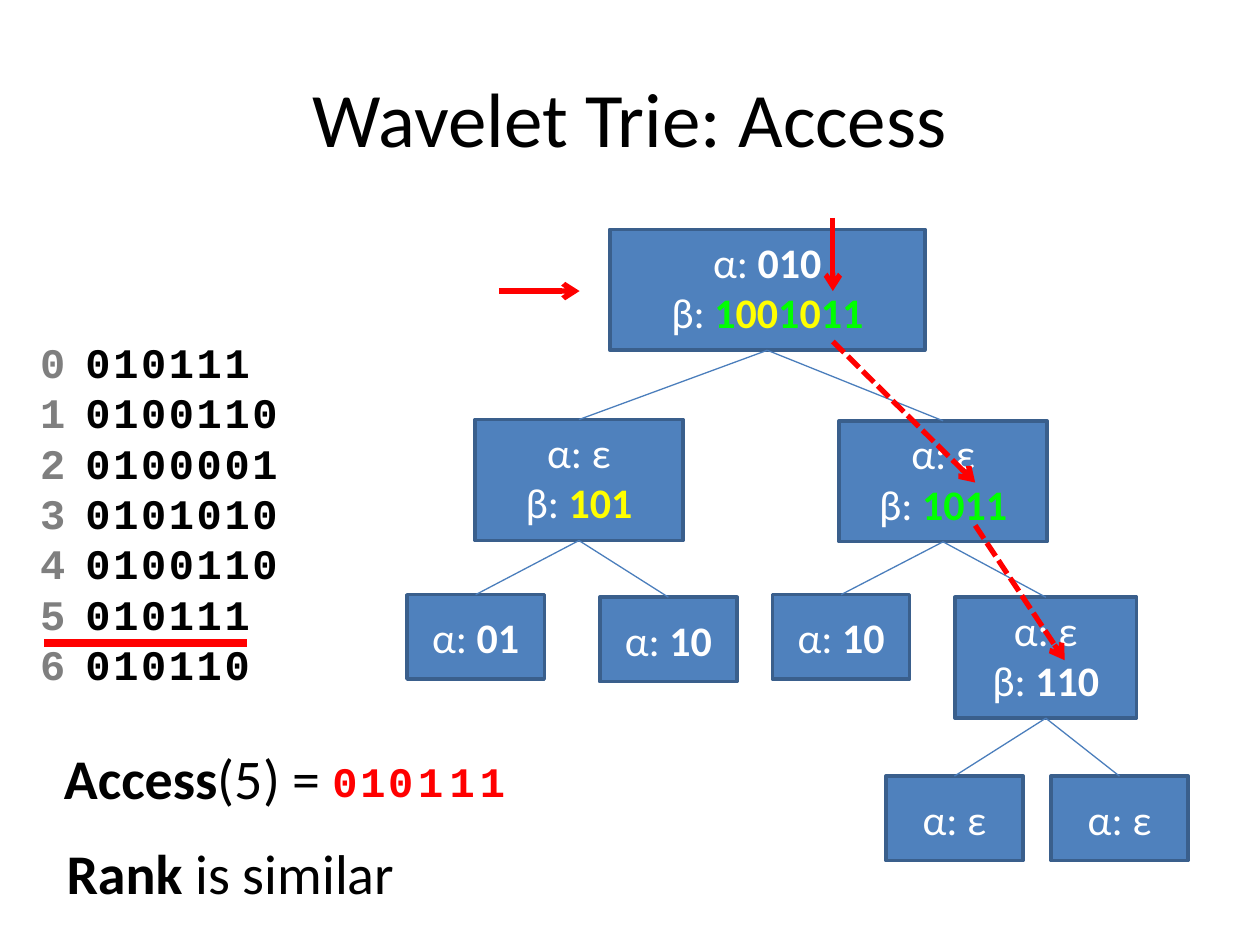
from lxml import etree
from pptx import Presentation
from pptx.dml.color import RGBColor
from pptx.enum.dml import MSO_LINE
from pptx.enum.shapes import MSO_CONNECTOR, MSO_SHAPE
from pptx.enum.text import MSO_ANCHOR, MSO_AUTO_SIZE, PP_ALIGN
from pptx.oxml.ns import qn
from pptx.util import Inches, Pt

STRAIGHT = MSO_CONNECTOR.STRAIGHT
RECTANGLE = MSO_SHAPE.RECTANGLE
MIDDLE = MSO_ANCHOR.MIDDLE
CENTER = PP_ALIGN.CENTER
LEFT = PP_ALIGN.LEFT
GROW = MSO_AUTO_SIZE.SHAPE_TO_FIT_TEXT
DASH = MSO_LINE.SQUARE_DOT
BOTTOM_SIDE, TOP_SIDE = 2, 0

BLACK, WHITE, GRAY, RED = "000000", "FFFFFF", "7F7F7F", "FF0000"
GREEN, YELLOW = "00FF00", "FFFF00"
NODE_FILL, NODE_LINE, EDGE = "4F81BD", "3A5F8C", "4B7EBC"
SANS, MONO = "Calibri", "Courier New"

prs = Presentation()
prs.slide_width, prs.slide_height = Inches(10), Inches(7.5)
slide = prs.slides.add_slide(prs.slide_layouts[6])


def write_runs(paragraph, runs, size, font):
    """Add (text, colour, bold) runs; a newline becomes a line break."""
    for text, color, bold in runs:
        for i, line in enumerate(text.split("\n")):
            if i:
                paragraph.add_line_break()
            if not line:
                continue
            run = paragraph.add_run()
            run.text = line
            run.font.size, run.font.name, run.font.bold = Pt(size), font, bold
            run.font.color.rgb = RGBColor.from_string(color)
            if font == MONO:
                run.font._element.set("spc", "150")


def draw_line(start, end, color, width, dash=None, arrow=False):
    line = slide.shapes.add_connector(STRAIGHT, *map(Inches, start + end))
    line.line.color.rgb = RGBColor.from_string(color)
    line.line.width = Pt(width)
    if dash:
        line.line.dash_style = dash
    if arrow:
        etree.SubElement(line.line._get_or_add_ln(), qn("a:tailEnd"), type="arrow")
    etree.SubElement(line._element.spPr, qn("a:effectLst"))
    return line


# Trie nodes: left, top, width, alpha, coloured beta pieces
nodes = {
    "root": (4.84, 1.82, 2.5, "010", [
        ("1", GREEN), ("00", YELLOW), ("1", GREEN), ("0", YELLOW), ("11", GREEN)]),
    "0": (3.77, 3.33, 1.65, "ε", [("101", YELLOW)]),
    "1": (6.66, 3.34, 1.65, "ε", [("1011", GREEN)]),
    "00": (3.23, 4.72, 1.09, "01", []),
    "01": (4.76, 4.74, 1.09, "10", []),
    "10": (6.13, 4.72, 1.09, "10", []),
    "11": (7.58, 4.74, 1.44, "ε", [("110", WHITE)]),
    "110": (7.03, 6.16, 1.09, "ε", []),
    "111": (8.34, 6.16, 1.09, "ε", []),
}
boxes = {}
for key, (left, top, width, alpha, beta) in nodes.items():
    height = 0.96 if beta else 0.67
    node = slide.shapes.add_shape(
        RECTANGLE, Inches(left), Inches(top), Inches(width), Inches(height))
    node.shadow.inherit = False
    node.fill.solid()
    node.fill.fore_color.rgb = RGBColor.from_string(NODE_FILL)
    node.line.color.rgb = RGBColor.from_string(NODE_LINE)
    node.line.width = Pt(2)
    frame = node.text_frame
    frame.word_wrap, frame.vertical_anchor = True, MIDDLE
    runs = [("α: ", WHITE, False), (alpha, WHITE, alpha != "ε")]
    if beta:
        frame.margin_top = 0
        runs.append(("\nβ: ", WHITE, False))
        runs += [(bits, color, True) for bits, color in beta]
    frame.paragraphs[0].alignment = CENTER
    write_runs(frame.paragraphs[0], runs, 24, SANS)
    boxes[key] = node

# Trie edges: a child's key is its parent's key plus one bit
for key, child in boxes.items():
    if key != "root":
        edge = draw_line((0, 0), (1, 1), EDGE, 0.75)
        edge.begin_connect(boxes[key[:-1] or "root"], BOTTOM_SIDE)
        edge.end_connect(child, TOP_SIDE)

# Text: left, top, width, height, wrap, size, font, paragraphs of runs
strings = ["010111", "0100110", "0100001", "0101010", "0100110", "010111", "010110"]
indices = "\n".join(str(i) for i in range(len(strings)))
texts = [
    (0.5, 0.3, 9, 1.25, True, 44, SANS, [[("Wavelet Trie: Access", BLACK, False)]]),
    (0.58, 2.62, 1.92, 2.93, True, 24, MONO, [[(s, BLACK, True)] for s in strings]),
    (0.22, 2.62, 0.54, 2.93, True, 24, MONO, [[(indices, GRAY, True)]]),
    (0.41, 5.85, 2.26, 0.64, False, 32, SANS,
     [[("Access", BLACK, True), ("(5) =", BLACK, False)]]),
    (0.43, 6.61, 2.83, 0.64, False, 32, SANS,
     [[("Rank", BLACK, True), (" is similar", BLACK, False)]]),
]
# Decoded answer, piece by piece
for left, width, bits in [(2.54, 0.91, "010"), (3.22, 0.4, "1"),
                          (3.47, 0.4, "1"), (3.71, 0.4, "1")]:
    texts.append((left, 5.95, width, 0.5, True, 24, MONO, [[(bits, RED, True)]]))

for left, top, width, height, wrap, size, font, paragraphs in texts:
    is_title = size == 44
    frame = slide.shapes.add_textbox(
        Inches(left), Inches(top), Inches(width), Inches(height)).text_frame
    frame.word_wrap = wrap
    if is_title:
        frame.vertical_anchor = MIDDLE
    else:
        frame.auto_size = GROW
    for i, runs in enumerate(paragraphs):
        paragraph = frame.add_paragraph() if i else frame.paragraphs[0]
        paragraph.alignment = CENTER if is_title else LEFT
        write_runs(paragraph, runs, size, font)

# Underline of the accessed string
draw_line((0.35, 5.1), (1.96, 5.1), RED, 4.5)

# Access path
draw_line((6.61, 2.71), (7.74, 3.83), RED, 3, DASH, arrow=True)
draw_line((7.74, 4.17), (8.45, 5.24), RED, 3, DASH, arrow=True)
draw_line((6.61, 1.73), (6.61, 2.31), RED, 3, arrow=True)
draw_line((3.96, 2.31), (4.6, 2.31), RED, 3, arrow=True)

prs.save("out.pptx")
